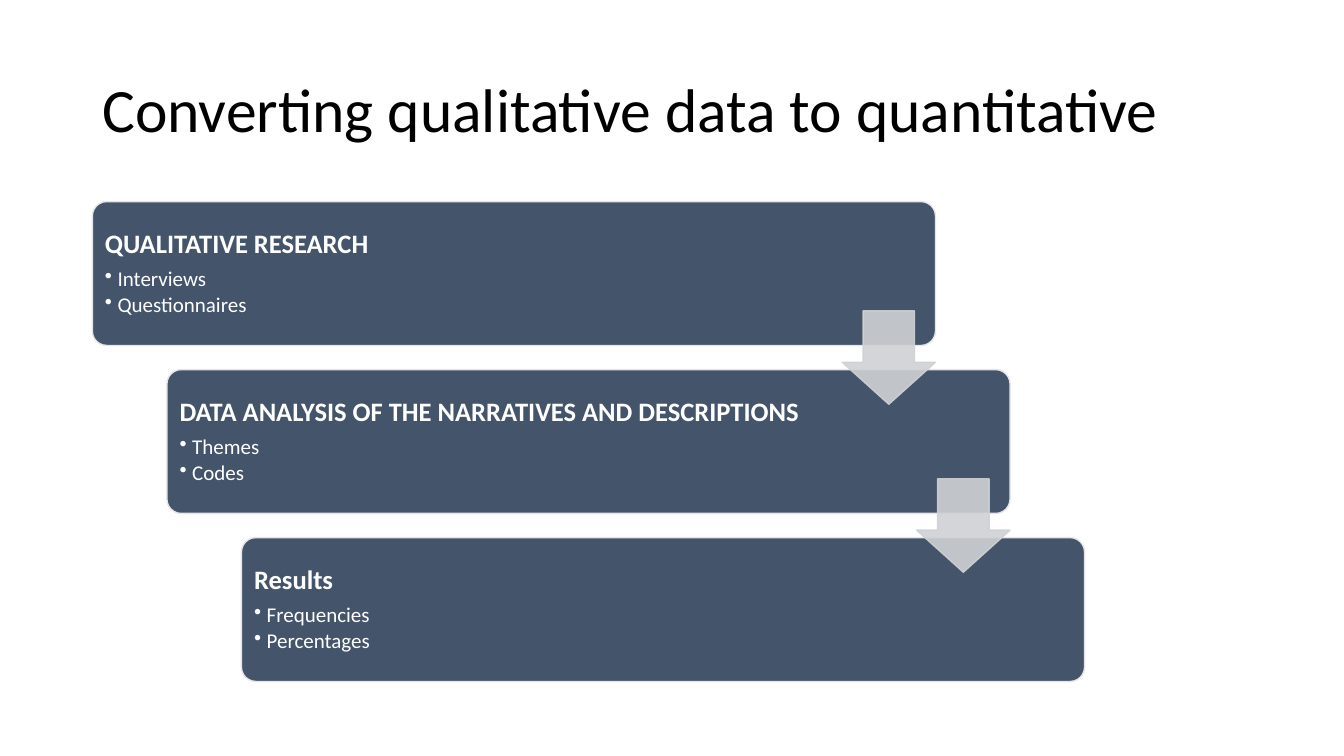
from dataclasses import dataclass

from lxml.etree import SubElement
from pptx import Presentation
from pptx.dml.color import RGBColor as Rgb
from pptx.enum.shapes import MSO_SHAPE as Preset
from pptx.enum.text import MSO_ANCHOR as Anchor, PP_ALIGN as Align
from pptx.oxml.ns import qn
from pptx.util import Pt

EMU_PER_PX = 9525
SLIDE_SIZE = (1280, 720)
TITLE_BOX = (88, 38, 1104, 139)
FIRST_STAGE = (88, 192, 803, 137)
FIRST_ARROW = (802, 296, 89, 89)
STEP_X, STEP_Y = 71, 160
STAGE_INSET = 8
BULLET_INDENT = 12

TITLE = "Converting qualitative data to quantitative"
STAGES = [
    ("QUALITATIVE RESEARCH", ["Interviews", "Questionnaires"]),
    ("DATA ANALYSIS OF THE NARRATIVES AND DESCRIPTIONS", ["Themes", "Codes"]),
    ("Results", ["Frequencies", "Percentages"]),
]


@dataclass(frozen=True)
class Theme:
    font: str = "Calibri"
    title_color: str = "000000"
    stage_fill: str = "44546A"
    stage_line: str = "E7E6E6"
    stage_text: str = "FFFFFF"
    arrow: str = "CFD1D4"
    arrow_opacity: int = 90
    title_size: int = 44
    heading_size: int = 19
    bullet_size: int = 15


THEME = Theme()


def px(length):
    return length * EMU_PER_PX


def set_all(target, values):
    for name, value in values.items():
        setattr(target, name, value)


def stepped(box, index):
    """Move a box down and right by whole steps of the staircase."""
    left, top, width, height = box
    return left + index * STEP_X, top + index * STEP_Y, width, height


def write(paragraph, text, size, color, bold=False, gap=0):
    set_all(paragraph, {"alignment": Align.LEFT, "line_spacing": 0.9,
                        "space_before": Pt(0), "space_after": Pt(gap)})
    run = paragraph.add_run()
    run.text = text
    set_all(run.font, {"name": THEME.font, "size": Pt(size), "bold": bold})
    run.font.color.rgb = Rgb.from_string(color)


def add_bullet(paragraph):
    properties = paragraph._p.get_or_add_pPr()
    properties.set("marL", str(px(BULLET_INDENT)))
    properties.set("indent", str(-px(BULLET_INDENT)))
    SubElement(properties, qn("a:buChar"), char="•")


def add_preset(slide, preset, box, adjustments, fill, line):
    shape = slide.shapes.add_shape(preset, *map(px, box))
    for index, value in enumerate(adjustments):
        shape.adjustments[index] = value
    shape.shadow.inherit = False
    shape.fill.solid()
    shape.fill.fore_color.rgb = Rgb.from_string(fill)
    shape.line.color.rgb = Rgb.from_string(line)
    shape.line.width = Pt(1)
    return shape


def add_title(slide):
    frame = slide.shapes.add_textbox(*map(px, TITLE_BOX)).text_frame
    set_all(frame, {"word_wrap": True, "vertical_anchor": Anchor.MIDDLE})
    write(frame.paragraphs[0], TITLE, THEME.title_size, THEME.title_color)


def add_stage(slide, box, heading, bullets):
    stage = add_preset(slide, Preset.ROUNDED_RECTANGLE, box, [0.1],
                       THEME.stage_fill, THEME.stage_line)
    frame = stage.text_frame
    inset = px(STAGE_INSET)
    set_all(frame, {"word_wrap": True, "vertical_anchor": Anchor.MIDDLE,
                    "margin_left": inset, "margin_right": inset,
                    "margin_top": inset, "margin_bottom": inset})
    write(frame.paragraphs[0], heading, THEME.heading_size,
          THEME.stage_text, bold=True, gap=6.65)
    for bullet in bullets:
        paragraph = frame.add_paragraph()
        write(paragraph, bullet, THEME.bullet_size, THEME.stage_text, gap=2)
        add_bullet(paragraph)


def add_arrow(slide, box):
    arrow = add_preset(slide, Preset.DOWN_ARROW, box, [0.55, 0.45],
                       THEME.arrow, THEME.arrow)
    for color in arrow._element.spPr.iter(qn("a:srgbClr")):
        SubElement(color, qn("a:alpha"), val=str(THEME.arrow_opacity * 1000))


def main():
    deck = Presentation()
    deck.slide_width, deck.slide_height = map(px, SLIDE_SIZE)
    slide = deck.slides.add_slide(deck.slide_layouts[6])
    add_title(slide)
    for index, (heading, bullets) in enumerate(STAGES):
        add_stage(slide, stepped(FIRST_STAGE, index), heading, bullets)
    for index in range(len(STAGES) - 1):
        add_arrow(slide, stepped(FIRST_ARROW, index))
    deck.save("out.pptx")


if __name__ == "__main__":
    main()
